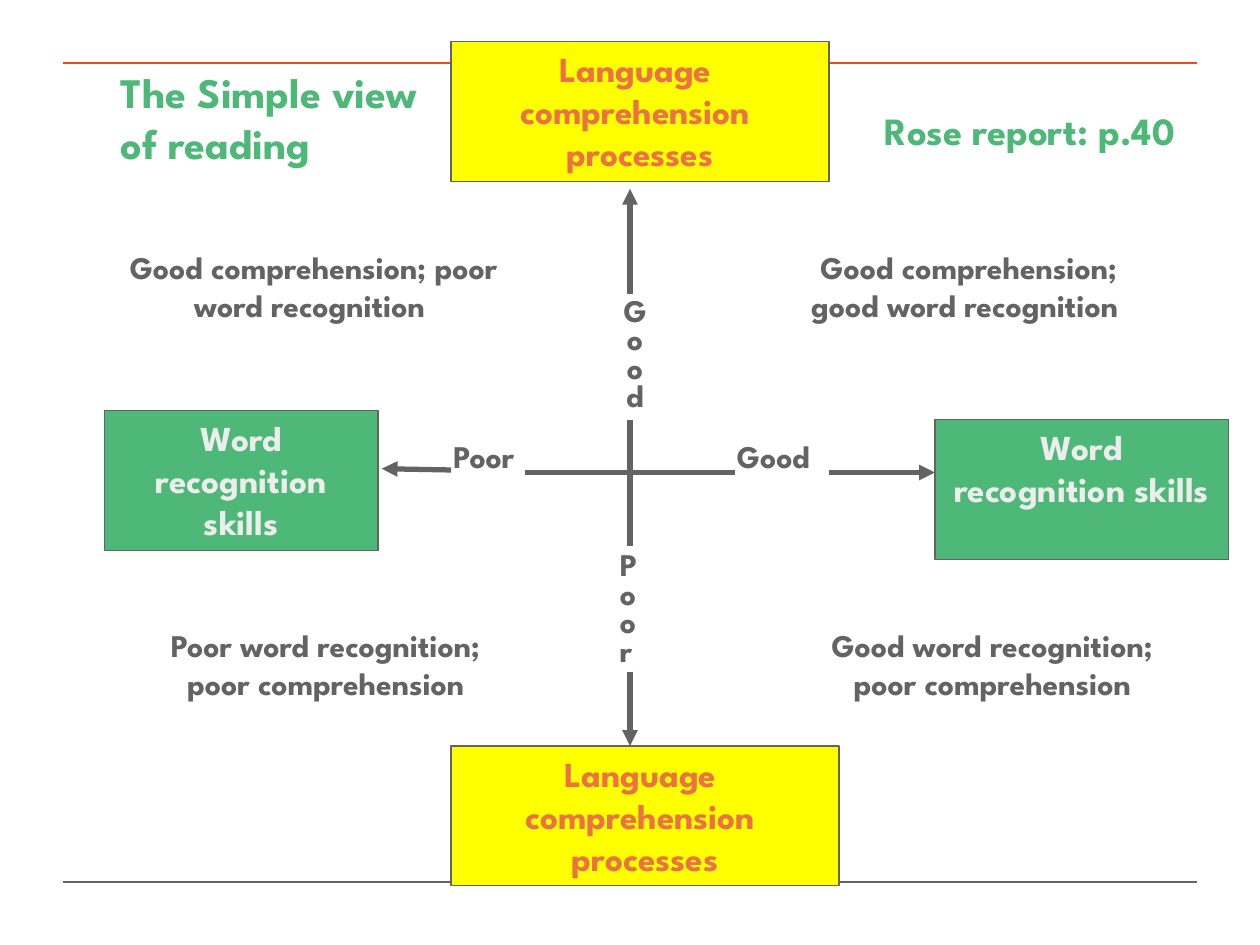
from dataclasses import dataclass

from lxml import etree
from pptx import Presentation
from pptx.dml.color import RGBColor
from pptx.enum.shapes import MSO_CONNECTOR, MSO_SHAPE
from pptx.enum.text import MSO_ANCHOR, PP_ALIGN
from pptx.oxml.ns import qn
from pptx.util import Inches, Pt

LINE = MSO_CONNECTOR.STRAIGHT
RECT = MSO_SHAPE.RECTANGLE
TOP = MSO_ANCHOR.TOP
LEFT, MID = PP_ALIGN.LEFT, PP_ALIGN.CENTER


@dataclass(frozen=True)
class Theme:
    """Hold the colours, font and type sizes."""
    font: str = "League Spartan"
    grey: str = "646363"
    red: str = "E74D15"
    coral: str = "EC7144"
    yellow: str = "FFFF00"
    green: str = "4DB877"
    pale: str = "EDEDED"
    head: int = 24
    note: int = 22
    box: int = 20
    body: int = 18


THEME = Theme()


def rgb(code):
    """Turn a hex code into a colour."""
    return RGBColor.from_string(code)


def write(shape, text, size, color, align=LEFT, space=None):
    """Fill a shape with bold text from the top down."""
    frame = shape.text_frame
    frame.word_wrap = True
    frame.vertical_anchor = TOP
    frame.text = text
    for para in frame.paragraphs:
        para.alignment = align
        para.line_spacing = space
        for run in para.runs:
            font = run.font
            font.name, font.size, font.bold = THEME.font, Pt(size), True
            font.color.rgb = rgb(color)


def label(slide, box, text, size=THEME.body, color=THEME.grey, align=LEFT, space=None):
    """Place a text box and return it."""
    shape = slide.shapes.add_textbox(*map(Inches, box))
    write(shape, text, size, color, align, space)
    return shape


def panel(slide, box, text, fill, color):
    """Place a filled box that names a skill."""
    shape = slide.shapes.add_shape(RECT, *map(Inches, box))
    shape.shadow.inherit = False
    shape.fill.solid()
    shape.fill.fore_color.rgb = rgb(fill)
    shape.line.color.rgb = rgb(THEME.grey)
    shape.line.width = Pt(0.75)
    write(shape, text, THEME.box, color, MID)


def stroke(slide, ends, color=THEME.grey, width=3, arrow=False):
    """Draw a line, with an arrowhead at its end if asked."""
    line = slide.shapes.add_connector(LINE, *map(Inches, ends))
    line.line.color.rgb = rgb(color)
    line.line.width = Pt(width)
    if arrow:
        tip = etree.SubElement(line.line._get_or_add_ln(), qn("a:tailEnd"))
        tip.set("type", "triangle")
    etree.SubElement(line._element.spPr, qn("a:effectLst"))


def frame(slide, box):
    """Rule the top and bottom edges of the box."""
    left, top, width, height = box
    for y, color in ((top, THEME.red), (top + height, THEME.grey)):
        stroke(slide, (left, y, left + width, y), color, 1)


def header(slide, box):
    """Place the title on the left and the source on the right."""
    left, top, width, height = box
    title = slide.shapes.title
    title.left, title.top = Inches(left), Inches(top)
    title.width, title.height = Inches(2.8), Inches(height)
    write(title, "The Simple view of reading", THEME.head, THEME.green)
    spot = (left + width - 2.92, top + 0.32, 2.92, 0.47)
    label(slide, spot, "Rose report: p.40", THEME.note, THEME.green)


def skills(slide, box):
    """Place the four skill boxes at the ends of the axes."""
    left, top, width, height = box
    tall = 1.11
    speech = "Language \ncomprehension \nprocesses"
    for y, wide in ((top, 3), (top + height - tall, 3.08)):
        panel(slide, (left + 2.75, y, wide, tall), speech, THEME.yellow, THEME.coral)
    words = "Word\nrecognition skills"
    for x, y, wide in ((left + width - 2.33, 3.33, 2.33), (left, 3.26, 2.17)):
        panel(slide, (x, y, wide, tall), words, THEME.green, THEME.pale)


def axes(slide, box):
    """Draw the crossed axes with their scale words."""
    left, top, width, height = box
    right, foot = left + width, top + height
    x, y = 5, 3.75
    stroke(slide, (x, 3.33, x, 4.33))
    stroke(slide, (4.17, y, 5.83, y))
    for ends in (
        (6.58, y, right, y),
        (3.58, 3.73, left, 3.72),
        (x, 2.33, x, top),
        (x, 5.33, x, foot),
    ):
        stroke(slide, ends, arrow=True)
    label(slide, (3.5, 3.42, 0.83, 0.4), "Poor")
    label(slide, (5.75, 3.42, 0.92, 0.4), "Good")
    label(slide, (4.75, 2.33, 0.58, 1), "\n".join("Good"), align=MID, space=0.75)
    low = label(slide, (4.75, 4.35, 0.58, 1), "\n".join("Poor"), space=0.75)
    low.text_frame.margin_left = Inches(0.17)


def quads(slide, box):
    """Describe the reader in each quarter of the box."""
    left, top, width, height = box
    tall = 0.7
    foot = top + height - tall
    for x, y, wide, text in (
        (left, top, 3.18, "Good comprehension; poor word recognition "),
        (left + 5.12, top, 3.34, "Good comprehension;\vgood word recognition "),
        (left + 0.1, foot, 3.17, "Poor word recognition; poor comprehension"),
        (left + 5.35, foot, 3.25, "Good word recognition; poor comprehension"),
    ):
        label(slide, (x, y, wide, tall), text, align=MID)


def main():
    """Build the slide and save it."""
    deck = Presentation()
    deck.slide_width, deck.slide_height = Inches(10), Inches(7.5)
    slide = deck.slides.add_slide(deck.slide_layouts[5])
    frame(slide, (0.5, 0.5, 9, 6.5))
    skills(slide, (0.83, 0.33, 8.92, 6.7))
    axes(slide, (3.03, 1.5, 4.39, 4.42))
    quads(slide, (0.9, 1.92, 8.6, 3.7))
    header(slide, (0.86, 0.48, 8.98, 0.91))
    deck.save("out.pptx")


if __name__ == "__main__":
    main()
